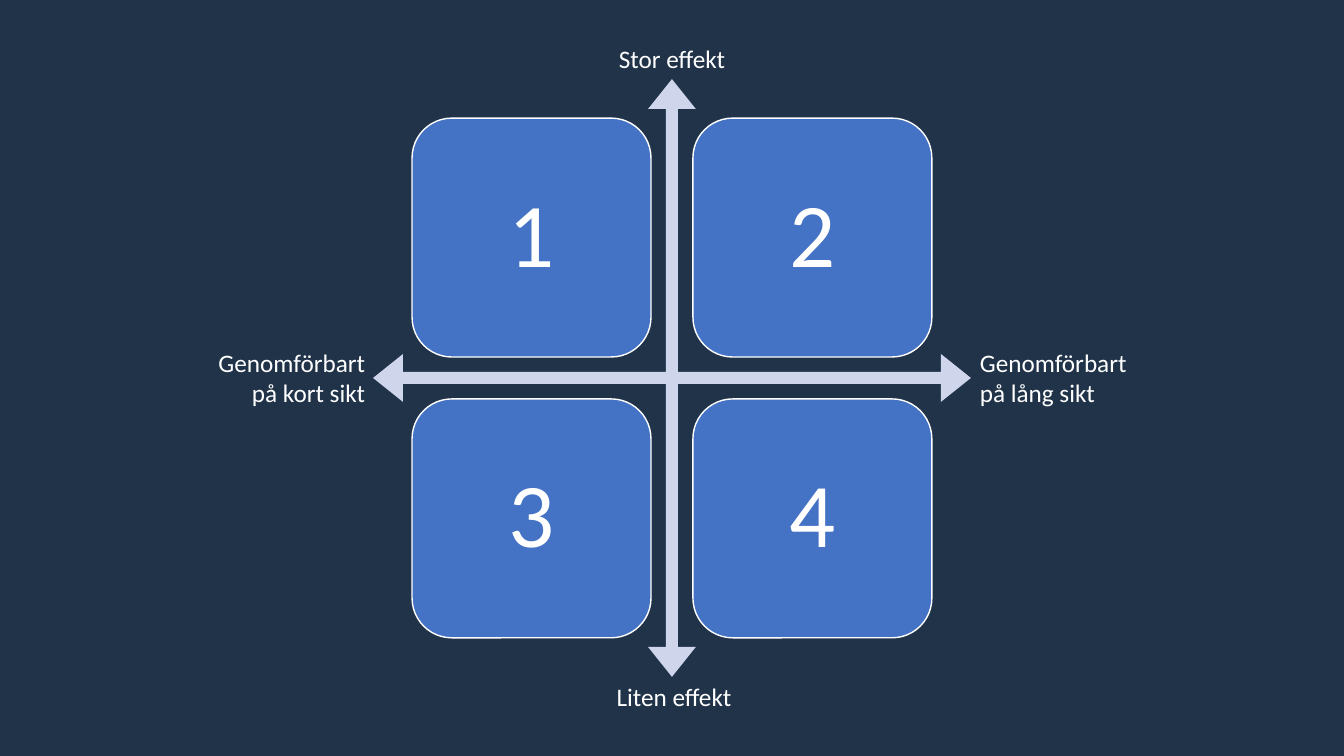
"""Build a slide with an effort and effect matrix of four numbered tiles."""
from pptx import Presentation
from pptx.dml.color import RGBColor
from pptx.enum.shapes import MSO_SHAPE
from pptx.enum.text import MSO_ANCHOR, PP_ALIGN
from pptx.util import Inches, Pt

QUAD_ARROW, ROUNDED = MSO_SHAPE.QUAD_ARROW, MSO_SHAPE.ROUNDED_RECTANGLE
MIDDLE = MSO_ANCHOR.MIDDLE
LEFT, CENTER, RIGHT = PP_ALIGN.LEFT, PP_ALIGN.CENTER, PP_ALIGN.RIGHT

COLORS = {"page": "203349", "arrow": "CFD5EA", "tile": "4472C4", "text": "FFFFFF"}
CELL = Inches(0.1)
TILE_OFFSET = 13.93
TILE_SIZE = 23.7
ARROW_SIZE = 59.3
LABEL_WIDTH = 17.9
LABELS = [
    ("Stor effekt", 0, -31.7, 4, CENTER),
    ("Liten effekt", 0.2, 31.6, 4, CENTER),
    ("Genomförbart på kort sikt", -38.4, 0, 7.1, RIGHT),
    ("Genomförbart på lång sikt", 38.5, 0, 7.1, LEFT),
]


class Matrix:
    """Place styled elements on a grid of cells counted from the page centre."""

    def __init__(self, deck):
        self.font = "Calibri"
        self.center = deck.slide_width / 2, deck.slide_height / 2
        self.page = deck.slides.add_slide(deck.slide_layouts[6])
        self.paint(self.page.background.fill, "page")

    def paint(self, fill, color):
        fill.solid()
        fill.fore_color.rgb = RGBColor.from_string(COLORS[color])

    def place(self, column, row, width, height):
        left = self.center[0] + (column - width / 2) * CELL
        top = self.center[1] + (row - height / 2) * CELL
        return [round(length) for length in (left, top, width * CELL, height * CELL)]

    def set_text(self, box, text, size, align):
        box.text_frame.word_wrap = True
        para = box.text_frame.paragraphs[0]
        para.text = text
        para.alignment = align
        para.font.name = self.font
        para.font.size = Pt(size)
        para.font.color.rgb = RGBColor.from_string(COLORS["text"])
        return para

    def shape(self, kind, column, row, size, color):
        box = self.page.shapes.add_shape(kind, *self.place(column, row, size, size))
        box.shadow.inherit = False
        self.paint(box.fill, color)
        return box

    def arrow(self):
        box = self.shape(QUAD_ARROW, 0, 0, ARROW_SIZE, "arrow")
        box.line.fill.background()
        for index, share in enumerate((0.02, 0.04, 0.05)):
            box.adjustments[index] = share

    def tile(self, number, column, row):
        box = self.shape(ROUNDED, column, row, TILE_SIZE, "tile")
        self.paint(box.line.fill, "text")
        box.line.width = Pt(1)
        box.text_frame.vertical_anchor = MIDDLE
        self.set_text(box, str(number), 65, CENTER).line_spacing = 0.9

    def label(self, text, column, row, height, align):
        place = self.place(column, row, LABEL_WIDTH, height)
        self.set_text(self.page.shapes.add_textbox(*place), text, 18, align)


def main():
    deck = Presentation()
    deck.slide_width, deck.slide_height = Inches(13.33), Inches(7.5)
    matrix = Matrix(deck)
    matrix.arrow()
    for index in range(4):
        row, column = divmod(index, 2)
        matrix.tile(index + 1, (2 * column - 1) * TILE_OFFSET, (2 * row - 1) * TILE_OFFSET)
    for label in LABELS:
        matrix.label(*label)
    deck.save("out.pptx")


if __name__ == "__main__":
    main()
